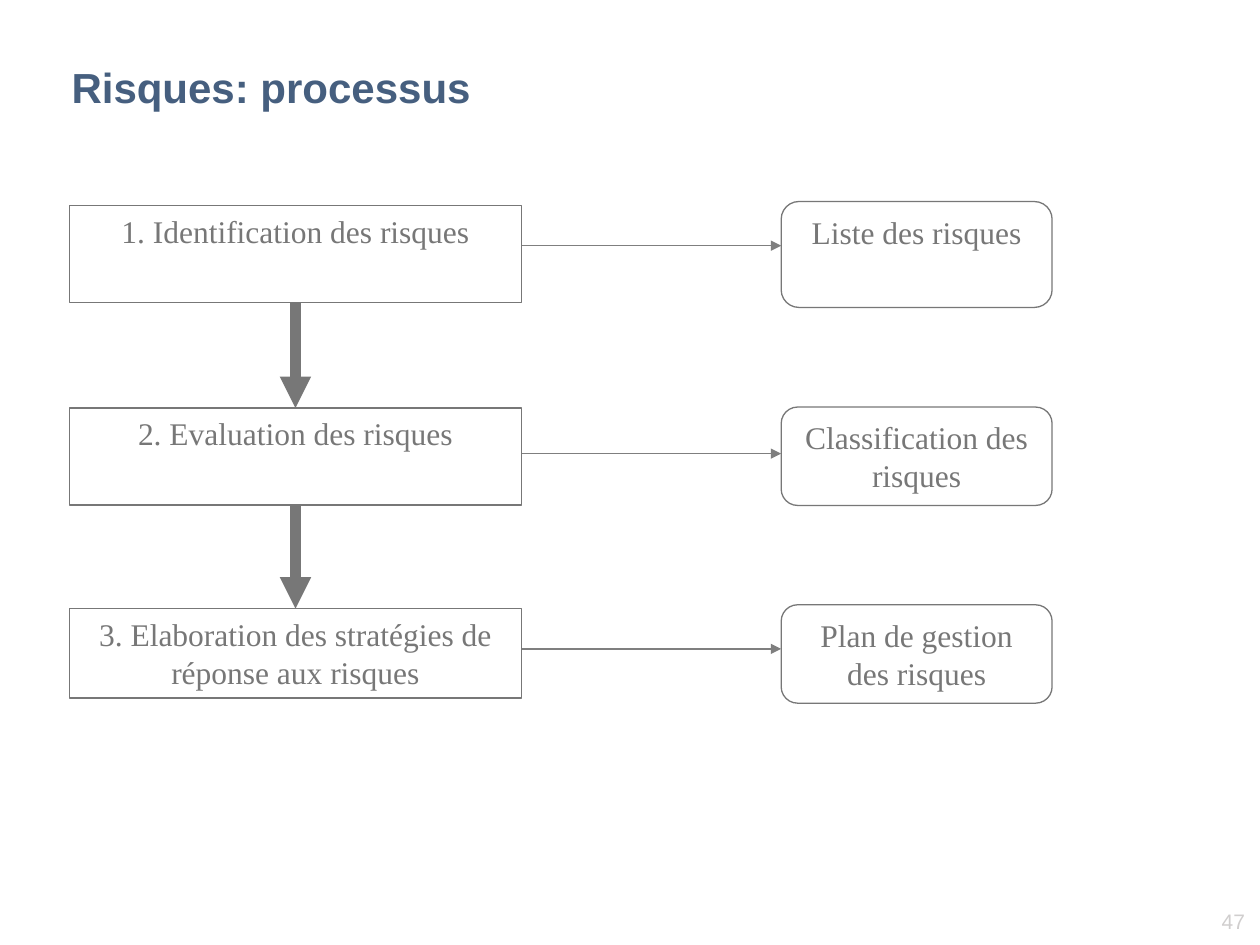
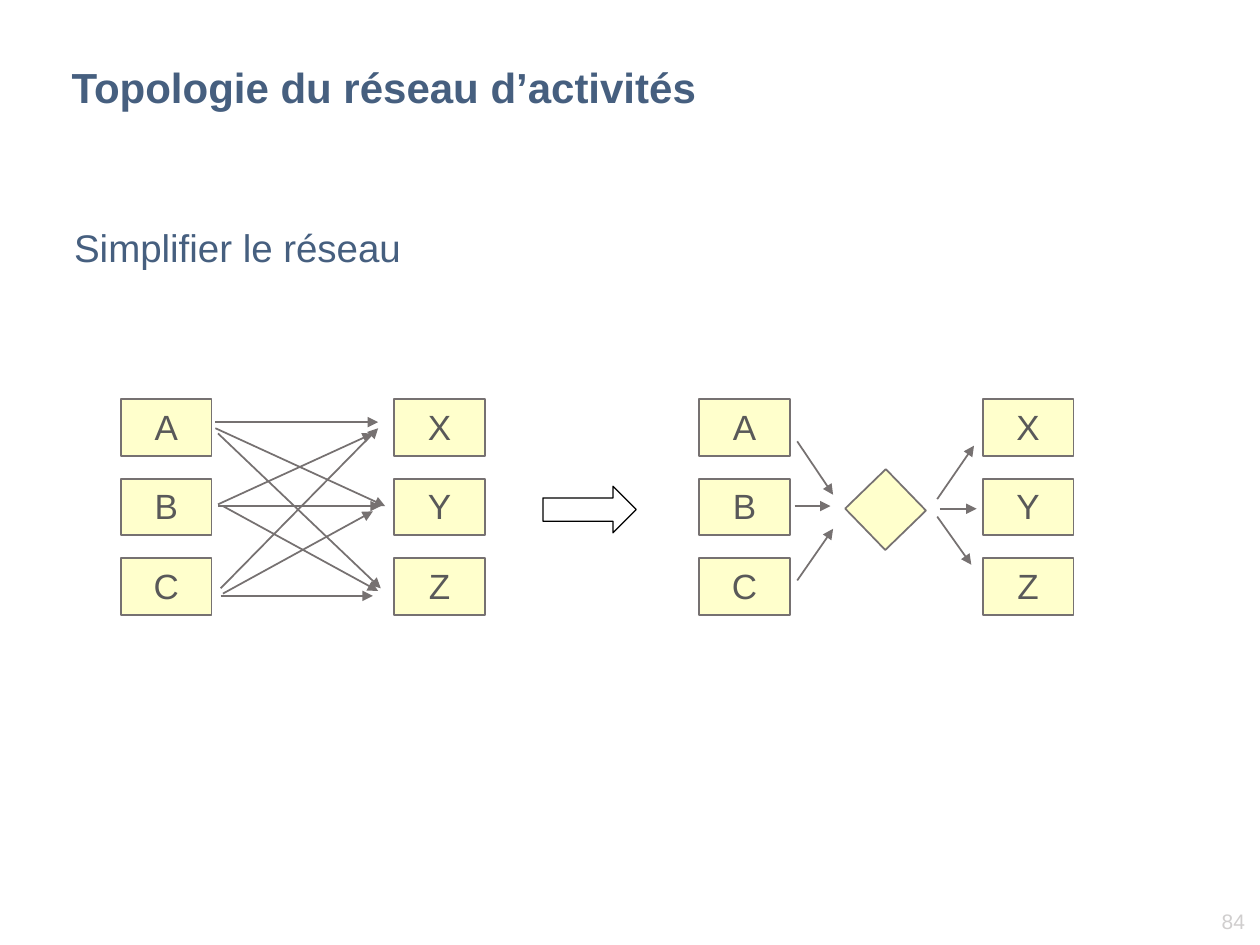
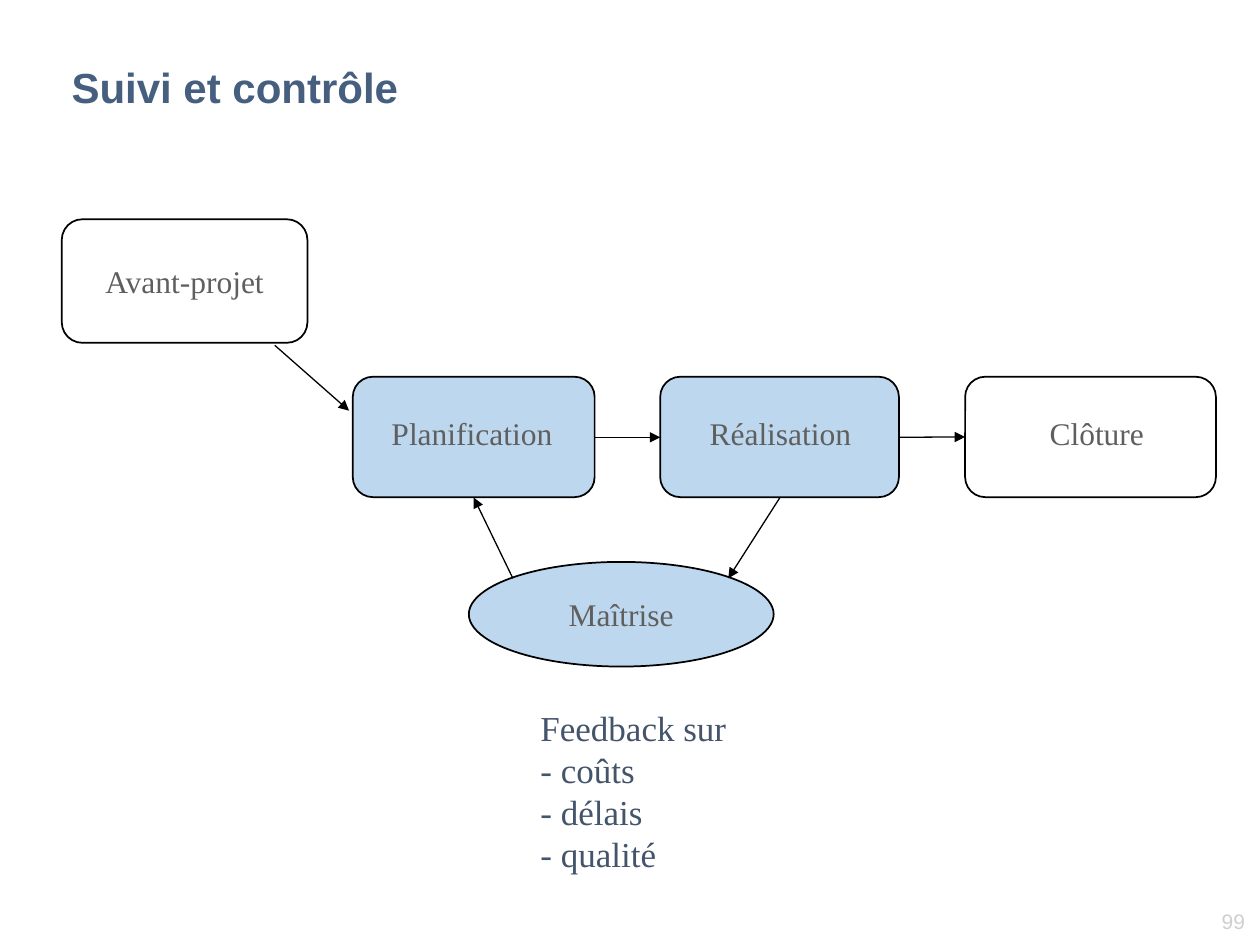
"""Build three project management slides: risks, activity network, control."""
from lxml import etree
from pptx import Presentation
from pptx.dml.color import RGBColor
from pptx.enum import shapes as kinds, text as txt
from pptx.oxml import ns
from pptx.util import Pt

RECT = kinds.MSO_SHAPE.RECTANGLE
ROUND = kinds.MSO_SHAPE.ROUNDED_RECTANGLE
OVAL = kinds.MSO_SHAPE.OVAL
ARROW = kinds.MSO_SHAPE.RIGHT_ARROW
LEFT, MID, RIGHT = txt.PP_ALIGN.LEFT, txt.PP_ALIGN.CENTER, txt.PP_ALIGN.RIGHT
TOP, HALF = txt.MSO_ANCHOR.TOP, txt.MSO_ANCHOR.MIDDLE

SANS, SERIF = "Arial", "Times New Roman"
NAVY, SLATE, PALE = "465F7F", "44546A", "D0CECE"
GREY, ASH, STONE = "777777", "7F7F7F", "767171"
DARK, SMOKE, BLACK = "595959", "5F5F5F", "000000"
CREAM, SKY = "FFFFCC", "BDD7EE"


def paint(code):
    """Turn a hex string into a colour."""
    return RGBColor.from_string(code)


def write(shape, words, font, size, color, align=LEFT, anchor=TOP,
          before=0, bold=False, wrap=True):
    """Fill a shape with text in one style."""
    frame = shape.text_frame
    frame.text = words
    frame.word_wrap = wrap
    frame.vertical_anchor = anchor
    for para in frame.paragraphs:
        para.alignment = align
        para.space_before = Pt(before)
        for run in para.runs:
            run.font.name = font
            run.font.size = Pt(size)
            run.font.bold = bold
            run.font.color.rgb = paint(color)


def label(slide, box, words, *style, **more):
    """Add a text box with styled text."""
    area = slide.shapes.add_textbox(*map(Pt, box))
    write(area, words, *style, **more)


def block(slide, kind, box, line, width=1, fill=None):
    """Add a flat shape with an optional fill."""
    shape = slide.shapes.add_shape(kind, *map(Pt, box))
    shape.shadow.inherit = False
    shape.line.color.rgb = paint(line)
    shape.line.width = Pt(width)
    if fill:
        shape.fill.solid()
        shape.fill.fore_color.rgb = paint(fill)
    else:
        shape.fill.background()
    return shape


def arrow(slide, start, end, color, width):
    """Add a straight line with a triangle at its end."""
    line = slide.shapes.add_connector(
        kinds.MSO_CONNECTOR.STRAIGHT, *map(Pt, (*start, *end)))
    line.line.color.rgb = paint(color)
    line.line.width = Pt(width)
    stroke = line.line._get_or_add_ln()
    etree.SubElement(stroke, ns.qn("a:tailEnd"), type="triangle")
    etree.SubElement(line._element.spPr, ns.qn("a:effectLst"))


def start(deck, title, page):
    """Add a blank slide with its title and page number."""
    slide = deck.slides.add_slide(deck.slide_layouts[6])
    label(slide, (659.5, 515.5, 59, 21.6), str(page), SANS, 12, PALE,
          align=RIGHT, before=2)
    label(slide, (33.8, 29.5, 610, 40.3), title, SANS, 24, NAVY,
          anchor=HALF, bold=True)
    return slide


def risks(slide, box):
    """Draw the steps of the risk process with their results."""
    left, top, wide, _ = box
    step, out = 258.5, 154.8
    rows = [
        ("1. Identification des risques", 2.2, 55.4,
         "Liste des risques", 0, 60.5, 25.2),
        ("2. Evaluation des risques", 118, 55.4,
         "Classification des risques", 117.4, 56.2, 144),
        ("3. Elaboration des stratégies de réponse aux risques", 232.6, 51.1,
         "Plan de gestion des risques", 230.4, 56.2, 255.6),
    ]
    for task, high, tall, result, rise, size, level in rows:
        parts = ((RECT, task, (left, top + high, step, tall)),
                 (ROUND, result, (left + wide - out, top + rise, out, size)))
        for kind, words, area in parts:
            shape = block(slide, kind, area, GREY, 0.75)
            write(shape, words, SERIF, 18, GREY, align=MID, before=2)
        arrow(slide, (left + step, top + level),
              (left + wide - out, top + level), ASH, 0.75)
    for upper, lower in zip(rows, rows[1:]):
        center = left + step / 2
        arrow(slide, (center, top + upper[1] + upper[2]),
              (center, top + lower[1]), GREY, 6)


def net(slide, box, lines):
    """Draw two columns of activities and the links between them."""
    left, top, wide, tall = box
    cell, high = 51.84, 32.4
    pitch = (tall - high) / 2
    for side, names in ((left, "ABC"), (left + wide - cell, "XYZ")):
        for row, name in enumerate(names):
            shape = block(slide, RECT, (side, top + row * pitch, cell, high),
                          STONE, fill=CREAM)
            write(shape, name, SANS, 20, DARK, align=MID, before=3)
    for x1, y1, x2, y2 in lines:
        arrow(slide, (left + x1, top + y1), (left + x2, top + y2), STONE, 1)


def topo(slide, box):
    """Draw the full network and its simpler form with a hub."""
    left, top, wide, tall = box
    full = [(54, 13, 147, 13), (54, 16.5, 151, 61), (55.5, 19.5, 148.5, 108),
            (55.5, 60, 144, 19.5), (55.5, 61, 148.5, 61),
            (58.3, 61, 147, 109.5), (57, 108, 147, 16.5),
            (58.3, 111, 144, 64), (57, 112.3, 144, 112.3)]
    short = [(56, 24, 76.5, 54.5), (54.5, 61, 75, 61), (56, 103.5, 76.5, 74),
             (136, 57, 157, 26.5), (137.5, 62.5, 158.5, 62.5),
             (136, 67, 155.5, 94.5)]
    net(slide, (left, top, 208, tall), full)
    right = left + wide - 213.84
    net(slide, (right, top, 213.84, tall), short)
    hub = block(slide, RECT, (right + 90, top + 46.8, 33, 32.4),
                STONE, fill=CREAM)
    hub.rotation = 45.9
    block(slide, ARROW, (left + 241.2, top + 49.7, 53.3, 26.6), BLACK, 0.75)


def control(slide, box):
    """Draw the project phases and the control loop."""
    left, top = box[:2]

    def place(x, y, *size):
        """Shift a place into the region."""
        return (left + x, top + y, *size)

    ends = [("Avant-projet", ROUND, (0, 0, 140.4, 70.6), None),
            ("Maîtrise", OVAL, (232.6, 195.8, 174.2, 59.8), SKY)]
    for name, kind, area, fill in ends:
        shape = block(slide, kind, place(*area), BLACK, fill=fill)
        write(shape, name, SERIF, 18, SMOKE, align=MID, anchor=HALF,
              wrap=False)
    phases = [("Planification", 166.3, 138.2, 175.7, 117.4, SKY),
              ("Réalisation", 342, 136.4, 352, 117.4, SKY),
              ("Clôture", 516.2, 143.3, 537.1, 108.7, None)]
    for name, x, wide, inner, span, fill in phases:
        block(slide, ROUND, place(x, 90, wide, 68.8), BLACK, fill=fill)
        label(slide, place(inner, 107.6, span, 32.4), name, SERIF, 18, SMOKE,
              align=MID, before=3)
    links = [(304.6, 124.6, 342, 124.6), (478.4, 124.6, 516.2, 124.4),
             (410.4, 159, 380.9, 205.2), (257.8, 205.2, 235.4, 159),
             (121.7, 72, 164.2, 109.4)]
    for x1, y1, x2, y2 in links:
        arrow(slide, place(x1, y1), place(x2, y2), BLACK, 0.75)
    label(slide, place(266.4, 275, 121.7, 104.4),
          "Feedback sur\n- coûts\n- délais\n- qualité", SERIF, 20, SLATE,
          wrap=False)


def main():
    """Build and save the deck."""
    deck = Presentation()
    deck.slide_width, deck.slide_height = Pt(720), Pt(540)
    risks(start(deck, "Risques: processus", 47), (39.6, 115.2, 561.6, 286.6))
    slide = start(deck, "Topologie du réseau d’activités", 84)
    label(slide, (35.3, 124.6, 648, 63.4), "Simplifier le réseau",
          SANS, 22, NAVY, before=3)
    topo(slide, (69.1, 228.2, 544.3, 123.1))
    control(start(deck, "Suivi et contrôle", 99), (35.3, 125.3, 660, 380))
    deck.save("out.pptx")


if __name__ == "__main__":
    main()
